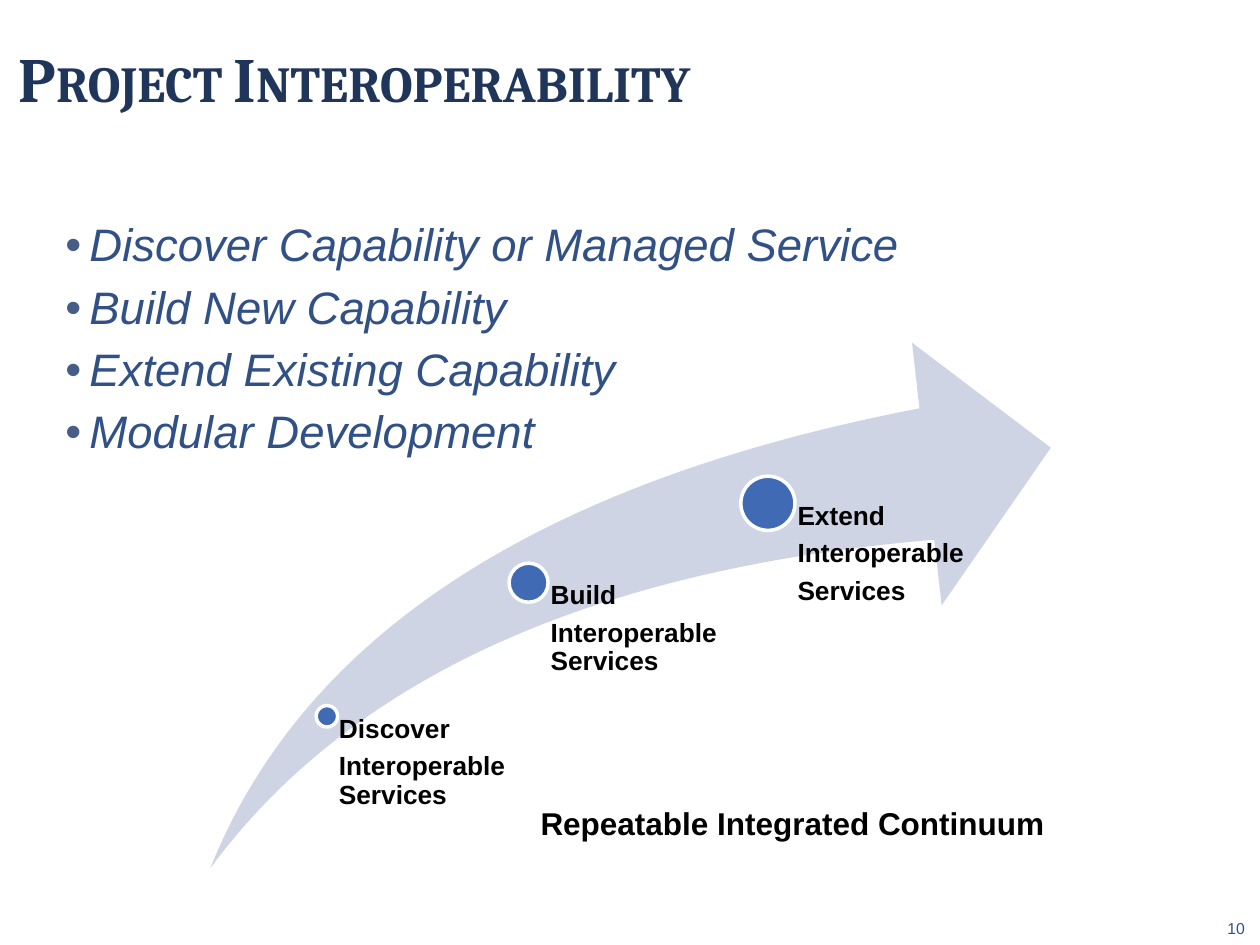
from dataclasses import dataclass

from lxml import etree
from pptx import Presentation
from pptx import util as u
from pptx.dml.color import RGBColor
from pptx.enum import shapes, text
from pptx.oxml import ns

PX = 9144  # EMU per px, at 100 px to the inch
HUES = {
    "title": "20355A", "body": "305086", "bullet": "465D87", "label": "000000",
    "arrow": "CFD4E5", "dot": "406AB3", "rim": "FFFFFF",
}
Box = tuple[int, int, int, int]


@dataclass
class Style:
    size: int
    hue: str
    face: str = "Arial"
    bold: bool = False
    italic: bool = False
    align: text.PP_ALIGN = text.PP_ALIGN.LEFT
    line: float = 1.0
    before: float = 0
    after: float = 0


@dataclass
class Step:
    dot: Box
    label: Box
    inset: int
    words: str


TITLE = Style(36, "title", "Cambria", bold=True, line=0.9)
LIST = Style(26, "body", italic=True, line=0.95, before=3, after=3)
LABEL = Style(15, "label", bold=True, line=0.9, after=5.25)
CLAIM = Style(18, "label", bold=True, align=text.PP_ALIGN.CENTER)
PAGE = Style(9, "body", align=text.PP_ALIGN.RIGHT)

STEPS = [
    Step((251, 560, 17, 17), (260, 568, 155, 120), 9,
         "Discover\nInteroperable Services"),
    Step((404, 447, 31, 31), (420, 462, 160, 227), 17,
         "Build\nInteroperable Services"),
    Step((588, 378, 43, 43), (610, 399, 160, 290), 23,
         "Extend\nInteroperable\nServices"),
]
POINTS = [
    "Discover Capability or Managed Service",
    "Build New Capability",
    "Extend Existing Capability",
    "Modular Development",
]


def scale(box: Box) -> list[int]:
    return [n * PX for n in box]


def tint(hue: str) -> RGBColor:
    return RGBColor.from_string(HUES[hue])


def write(slide, box: Box, words: str, style: Style, inset: int = 0,
          anchor=text.MSO_ANCHOR.TOP):
    frame = slide.shapes.add_textbox(*scale(box)).text_frame
    frame.word_wrap = True
    frame.vertical_anchor = anchor
    frame.margin_left = inset * PX
    frame.margin_top = frame.margin_right = frame.margin_bottom = 0
    frame.text = words
    for i, para in enumerate(frame.paragraphs):
        para.alignment = style.align
        para.line_spacing = style.line
        para.space_before = u.Pt(style.before if i else 0)
        para.space_after = u.Pt(style.after)
        for run in para.runs:
            font = run.font
            font.name, font.size = style.face, u.Pt(style.size)
            font.bold, font.italic = style.bold, style.italic
            font.color.rgb = tint(style.hue)
    return frame


def mark(para, indent: int) -> None:
    """Give the paragraph a hanging bullet."""
    props = para._p.get_or_add_pPr()
    props.set("marL", str(indent * PX))
    props.set("indent", str(-indent * PX))
    color = etree.SubElement(props, ns.qn("a:buClr"))
    etree.SubElement(color, ns.qn("a:srgbClr"), val=HUES["bullet"])
    etree.SubElement(props, ns.qn("a:buFont"), typeface="Arial")
    etree.SubElement(props, ns.qn("a:buChar"), char="•")


def draw(slide, kind, box: Box, hue: str, rim: bool = False):
    shape = slide.shapes.add_shape(kind, *scale(box))
    shape.shadow.inherit = False
    shape.fill.solid()
    shape.fill.fore_color.rgb = tint(hue)
    if rim:
        shape.line.color.rgb = tint("rim")
        shape.line.width = u.Pt(2)
    else:
        shape.line.fill.background()
    return shape


def main() -> None:
    deck = Presentation()
    deck.slide_width, deck.slide_height = 1000 * PX, 750 * PX
    slide = deck.slides.add_slide(deck.slide_layouts[6])

    points = write(slide, (52, 175, 840, 287), "\n".join(POINTS), LIST)
    for para in points.paragraphs:
        mark(para, 19)
    write(slide, (919, 729, 69, 15), "10", PAGE, anchor=text.MSO_ANCHOR.MIDDLE)

    arrow = draw(slide, shapes.MSO_SHAPE.SWOOSH_ARROW, (167, 272, 667, 417), "arrow")
    arrow.adjustments[0] = arrow.adjustments[1] = 0.25
    for step in STEPS:
        draw(slide, shapes.MSO_SHAPE.OVAL, step.dot, "dot", rim=True)
        write(slide, step.label, step.words, LABEL, step.inset)

    write(slide, (350, 638, 558, 30), "Repeatable Integrated Continuum", CLAIM)
    title = write(slide, (15, 15, 797, 77), "Project Interoperability", TITLE,
                  anchor=text.MSO_ANCHOR.BOTTOM)
    title.paragraphs[0].runs[0].font._element.set("cap", "small")
    deck.save("out.pptx")


if __name__ == "__main__":
    main()
